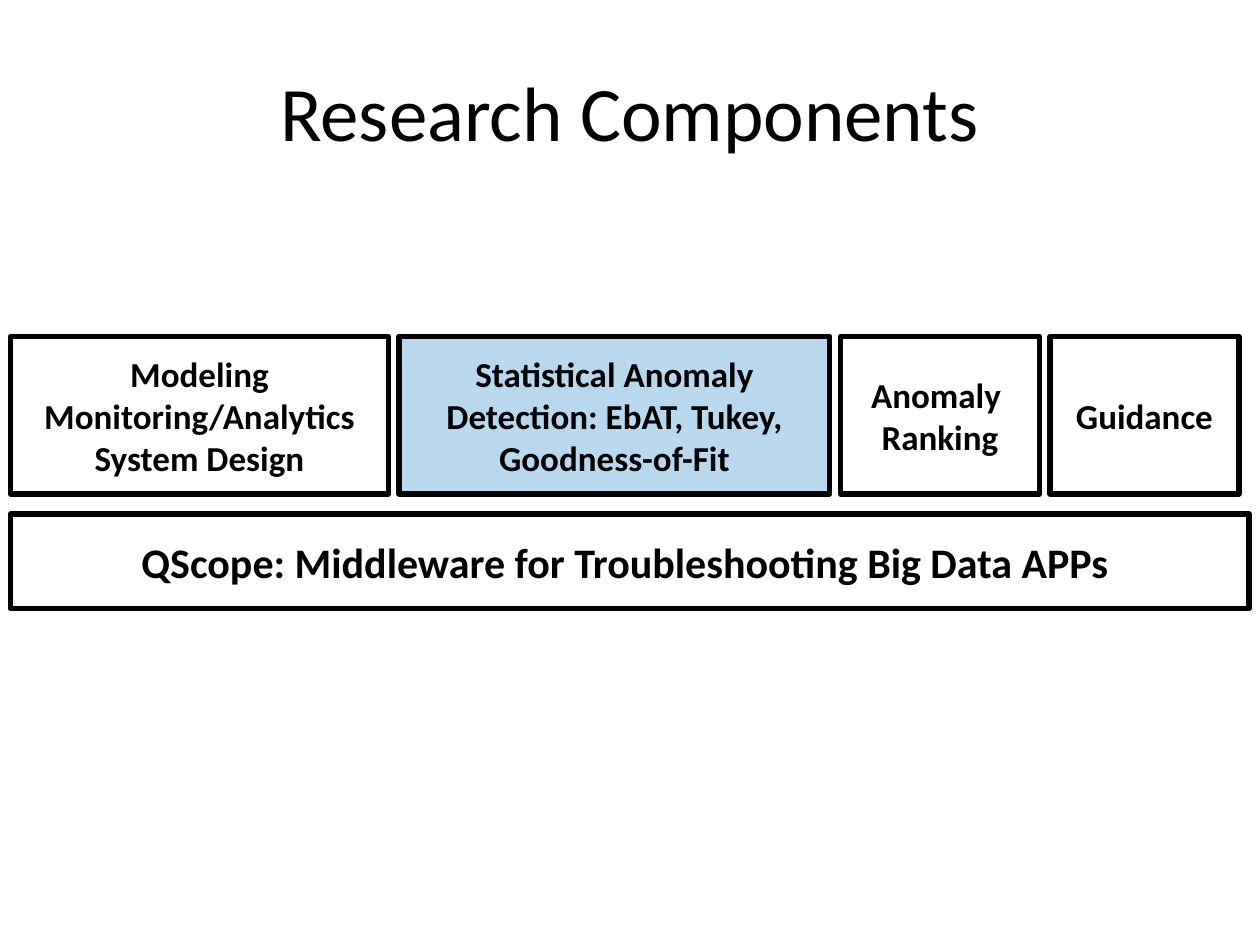
from lxml import etree
from pptx import Presentation
from pptx.dml.color import RGBColor
from pptx.enum.shapes import MSO_SHAPE
from pptx.enum.text import MSO_ANCHOR, PP_ALIGN
from pptx.oxml.ns import qn
from pptx.util import Inches, Pt

RECTANGLE = MSO_SHAPE.RECTANGLE
MIDDLE = MSO_ANCHOR.MIDDLE
CENTER = PP_ALIGN.CENTER
FONT = "Calibri"
BLACK = "000000"
WHITE = "FFFFFF"
HIGHLIGHT = "0070C0"
GAP = 1 / 12
COMPONENTS = [
    ("Modeling Monitoring/Analytics System Design", 3, None, None),
    ("Statistical Anomaly Detection: EbAT, Tukey, Goodness-of-Fit", 3.42, HIGHLIGHT, 27),
    ("Anomaly \nRanking", 1.58, WHITE, None),
    ("Guidance", 1.5, WHITE, None),
]


def color(value):
    """Return the colour for a hex string."""
    return RGBColor.from_string(value)


def write_text(shape, text, size, bold=False):
    """Write centred text in a shape, one paragraph for each line."""
    frame = shape.text_frame
    frame.word_wrap = True
    frame.vertical_anchor = MIDDLE
    frame.text = text
    for paragraph in frame.paragraphs:
        paragraph.alignment = CENTER
        for run in paragraph.runs:
            run.font.name = FONT
            run.font.size = Pt(size)
            run.font.bold = bold
            run.font.color.rgb = color(BLACK)


def add_title(slide, text, left, top, width, height):
    """Add the slide title in the given box."""
    title = slide.shapes.add_textbox(Inches(left), Inches(top), Inches(width), Inches(height))
    write_text(title, text, size=44)


def add_block(slide, text, left, top, width, height, size=20, fill=None, opacity=None):
    """Add an outlined block with bold text and an optional translucent fill."""
    block = slide.shapes.add_shape(
        RECTANGLE, Inches(left), Inches(top), Inches(width), Inches(height)
    )
    block.shadow.inherit = False
    block.line.color.rgb = color(BLACK)
    block.line.width = Pt(3)
    if fill is None:
        block.fill.background()
    else:
        block.fill.solid()
        block.fill.fore_color.rgb = color(fill)
    if opacity is not None:
        fill_color = block.fill._xPr.find(qn("a:solidFill"))[0]
        etree.SubElement(fill_color, qn("a:alpha")).set("val", str(opacity * 1000))
    write_text(block, text, size, bold=True)


def add_component_row(slide, left, top, height):
    """Add the research components side by side with equal gaps."""
    for text, width, fill, opacity in COMPONENTS:
        add_block(slide, text, left, top, width, height, fill=fill, opacity=opacity)
        left += width + GAP


def main():
    """Build and save the presentation."""
    presentation = Presentation()
    presentation.slide_width = Inches(10)
    presentation.slide_height = Inches(7.5)
    slide = presentation.slides.add_slide(presentation.slide_layouts[6])
    add_title(slide, "Research Components", 0.5, 0.25, 9, 1.25)
    add_component_row(slide, GAP, 2.67, 1.25)
    middleware = "QScope: Middleware for Troubleshooting Big Data APPs "
    add_block(slide, middleware, GAP, 4.08, 9.83, 0.75, size=24)
    presentation.save("out.pptx")


if __name__ == "__main__":
    main()
